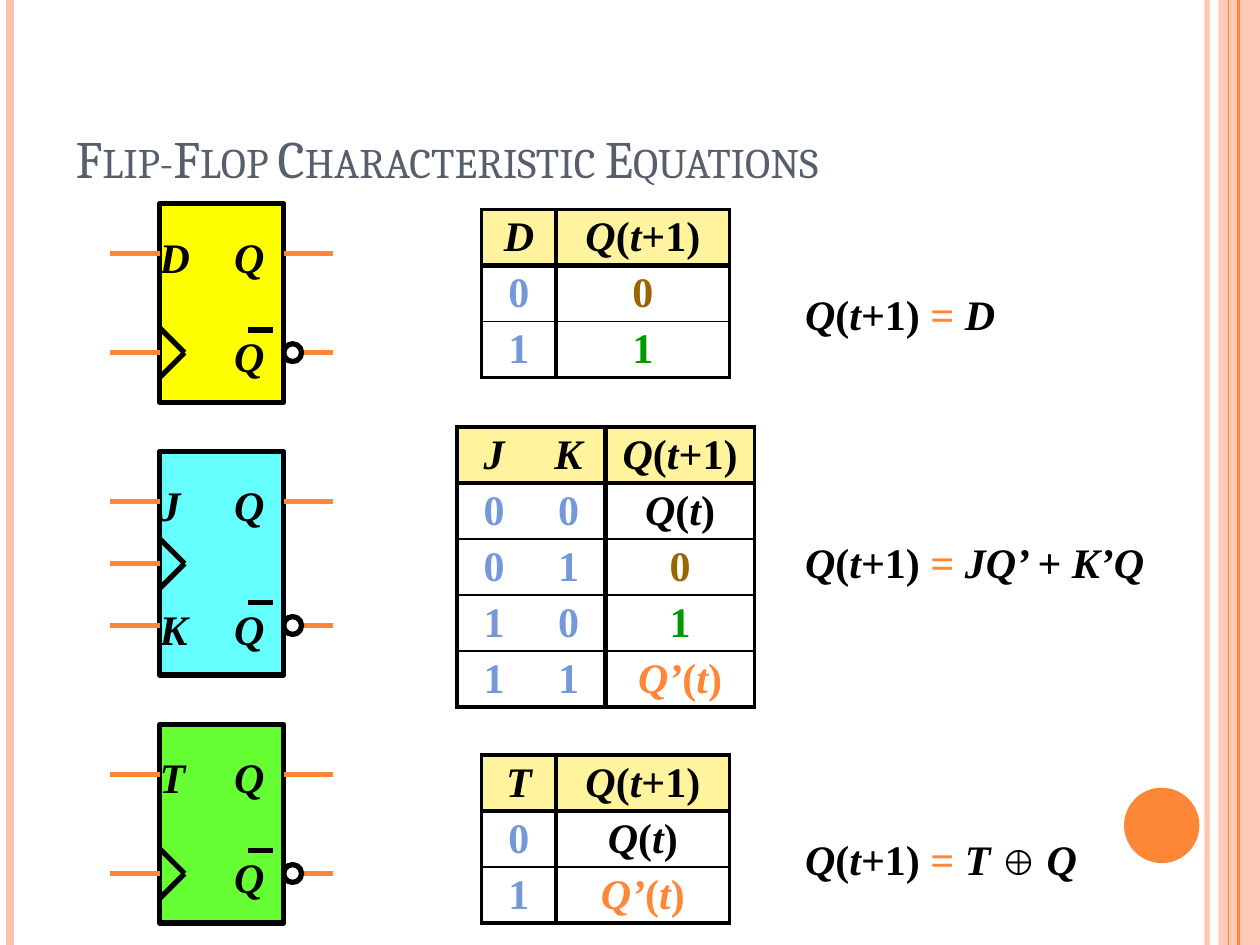
import dataclasses
import typing

import lxml.etree
import pptx
import pptx.dml.color
import pptx.enum.shapes
import pptx.enum.text
import pptx.oxml.ns
import pptx.util

Cm = pptx.util.Cm
Pt = pptx.util.Pt
qn = pptx.oxml.ns.qn


@dataclasses.dataclass(frozen=True)
class Theme:
    black: str = "000000"
    white: str = "FFFFFF"
    orange: str = "FE8637"
    peach: str = "FEC3AE"
    slate: str = "575F6D"
    header: str = "FFF39D"
    blue: str = "7598D9"
    brown: str = "996600"
    green: str = "009900"
    title_font: str = "Cambria"
    body_font: str = "Times New Roman"
    title_size: float = 30
    body_size: float = 24
    symbol_size: float = 20
    thick: float = 3
    frame: float = 2.25
    thin: float = 1


THEME = Theme()


class Run(typing.NamedTuple):
    text: str
    italic: bool = True
    color: str = THEME.black
    size: float = THEME.body_size


class Pin(typing.NamedTuple):
    label: str
    y: float


class FlipFlop(typing.NamedTuple):
    top: float
    height: float
    fill: str
    inputs: list[Pin]
    clock: float
    inverted: float


class TruthTable(typing.NamedTuple):
    left: float
    top: float
    widths: list[float]
    rows: list[list[list[Run]]]


class Equation(typing.NamedTuple):
    top: float
    width: float
    result: list[Run]


class Rule(typing.NamedTuple):
    x: float
    color: str
    width: float
    opacity: int = 100


def rgb(color: str) -> pptx.dml.color.RGBColor:
    return pptx.dml.color.RGBColor.from_string(color)


def set_opacity(element, percent: int) -> None:
    color = element.find(".//" + qn("a:srgbClr"))
    lxml.etree.SubElement(color, qn("a:alpha"), val=str(percent * 1000))


def draw_line(shapes, x1: float, y1: float, x2: float, y2: float, color: str, width: float = THEME.thick):
    line = shapes.add_connector(pptx.enum.shapes.MSO_CONNECTOR.STRAIGHT, Cm(x1), Cm(y1), Cm(x2), Cm(y2))
    line.line.color.rgb = rgb(color)
    line.line.width = Pt(width)
    lxml.etree.SubElement(line._element.spPr, qn("a:effectLst"))
    return line


def draw_shape(shapes, kind, left: float, top: float, width: float, height: float, fill: str, outlined: bool = False):
    shape = shapes.add_shape(kind, Cm(left), Cm(top), Cm(width), Cm(height))
    shape.shadow.inherit = False
    shape.fill.solid()
    shape.fill.fore_color.rgb = rgb(fill)
    if outlined:
        shape.line.color.rgb = rgb(THEME.black)
        shape.line.width = Pt(THEME.thick)
    else:
        shape.line.fill.background()
    return shape


def add_runs(paragraph, runs: list[Run]) -> None:
    for item in runs:
        run = paragraph.add_run()
        run.text = item.text
        run.font.name = THEME.body_font
        run.font.size = Pt(item.size)
        run.font.bold = True
        run.font.italic = item.italic
        run.font.color.rgb = rgb(item.color)


def draw_text(shapes, left: float, top: float, width: float, height: float, runs: list[Run], spacing: float = 1.0) -> None:
    frame = shapes.add_textbox(Cm(left), Cm(top), Cm(width), Cm(height)).text_frame
    frame.word_wrap = True
    frame.margin_left = frame.margin_right = frame.margin_top = frame.margin_bottom = 0
    frame.paragraphs[0].line_spacing = spacing
    add_runs(frame.paragraphs[0], runs)


def draw_flip_flop(slide, item: FlipFlop) -> None:
    shapes = slide.shapes.add_group_shape().shapes
    kinds = pptx.enum.shapes.MSO_SHAPE
    left, width, lead = 3.22, 2.5, 1.0
    right = left + width
    output, clock, inverted = (item.top + y for y in (1, item.clock, item.inverted))
    draw_shape(shapes, kinds.RECTANGLE, left, item.top, width, item.height, item.fill, True)
    for pin in item.inputs:
        y = item.top + pin.y
        draw_line(shapes, left, y, left - lead, y, THEME.orange)
        draw_text(shapes, left, y - 0.45, 1, 1, [Run(pin.label)])
    draw_line(shapes, left, clock, left - lead, clock, THEME.orange)
    for offset in (-0.5, 0.5):
        draw_line(shapes, left, clock + offset, left + 0.5, clock, THEME.black)
    for y in (output, inverted):
        draw_line(shapes, right, y, right + lead, y, THEME.orange)
        draw_text(shapes, left + 1.5, y - 0.45, 1, 1, [Run("Q")])
    draw_shape(shapes, kinds.OVAL, right, inverted - 0.18, 0.36, 0.36, THEME.white, True)
    draw_line(shapes, left + 1.78, inverted - 0.46, left + 2.28, inverted - 0.46, THEME.black)


def set_border(cell, side: str, width: float) -> None:
    properties = cell._tc.get_or_add_tcPr()
    line = lxml.etree.SubElement(properties, qn("a:ln" + side), w=str(int(Pt(width))))
    if width:
        fill = lxml.etree.SubElement(line, qn("a:solidFill"))
        lxml.etree.SubElement(fill, qn("a:srgbClr"), val=THEME.black)
    else:
        lxml.etree.SubElement(line, qn("a:noFill"))


def edge_width(index: int, count: int, divider: int, inner: float) -> float:
    if index in (0, count):
        return THEME.frame
    return THEME.thick if index == divider else inner


def draw_truth_table(slide, item: TruthTable) -> None:
    row_height = 1.13
    rows, columns = len(item.rows), len(item.widths)
    table = slide.shapes.add_table(rows, columns, Cm(item.left), Cm(item.top),
                                   Cm(sum(item.widths)), Cm(rows * row_height)).table
    table.first_row = table.horz_banding = False
    for column, width in zip(table.columns, item.widths):
        column.width = Cm(width)
    for r, values in enumerate(item.rows):
        table.rows[r].height = Cm(row_height)
        for c, runs in enumerate(values):
            cell = table.cell(r, c)
            cell.margin_left = cell.margin_right = cell.margin_top = cell.margin_bottom = 0
            cell.vertical_anchor = pptx.enum.text.MSO_ANCHOR.MIDDLE
            for side, edge in (("L", c), ("R", c + 1)):
                set_border(cell, side, edge_width(edge, columns, columns - 1, 0))
            for side, edge in (("T", r), ("B", r + 1)):
                set_border(cell, side, edge_width(edge, rows, 1, THEME.thin))
            if r == 0:
                cell.fill.solid()
                cell.fill.fore_color.rgb = rgb(THEME.header)
            else:
                cell.fill.background()
            paragraph = cell.text_frame.paragraphs[0]
            paragraph.alignment = pptx.enum.text.PP_ALIGN.CENTER
            add_runs(paragraph, runs)


def state(name: str, time: str, color: str = THEME.black) -> list[Run]:
    return [Run(name, True, color), Run("(", False, color), Run("t", True, color), Run(time, False, color)]


def bits(digits: str) -> list[list[Run]]:
    return [[Run(digit, False, THEME.blue)] for digit in digits]


NEXT, HOLD, TOGGLE = state("Q", "+1)"), state("Q", ")"), state("Q’", ")", THEME.orange)
RESET, SET = [Run("0", False, THEME.brown)], [Run("1", False, THEME.green)]

RULES = [Rule(24.33, THEME.peach, 3, 93), Rule(0.2, THEME.peach, 4.5),
         Rule(24.97, THEME.orange, 1.5), Rule(24.77, THEME.orange, 0.75)]
FLIP_FLOPS = [
    FlipFlop(4.11, 4, "FFFF00", [Pin("D", 1)], 3, 3),
    FlipFlop(9.11, 4.5, "66FFFF", [Pin("J", 1), Pin("K", 3.5)], 2.25, 3.5),
    FlipFlop(14.61, 4, "66FF33", [Pin("T", 1)], 3, 3),
]
TABLES = [
    TruthTable(9.71, 4.22, [1.5, 3.5], [[[Run("D")], NEXT], bits("0") + [RESET], bits("1") + [SET]]),
    TruthTable(9.21, 8.61, [1.5, 1.5, 3], [[[Run("J")], [Run("K")], NEXT], bits("00") + [HOLD],
                                           bits("01") + [RESET], bits("10") + [SET], bits("11") + [TOGGLE]]),
    TruthTable(9.71, 15.22, [1.5, 3.5], [[[Run("T")], NEXT], bits("0") + [HOLD], bits("1") + [TOGGLE]]),
]
EQUATIONS = [
    Equation(5.61, 4.5, [Run("D")]),
    Equation(10.61, 7, [Run("JQ’ "), Run("+", False), Run(" K’Q")]),
    Equation(16.61, 6.5, [Run("T "), Run("⊕", False, size=THEME.symbol_size), Run(" ", False), Run("Q")]),
]


def draw_title(slide, text: str) -> None:
    title = slide.shapes.title
    title.left, title.top, title.width, title.height = Cm(1.27), Cm(0.76), Cm(21.39), Cm(3.18)
    title.text_frame.vertical_anchor = pptx.enum.text.MSO_ANCHOR.BOTTOM
    paragraph = title.text_frame.paragraphs[0]
    paragraph.alignment = pptx.enum.text.PP_ALIGN.LEFT
    run = paragraph.add_run()
    run.text = text
    run.font.name = THEME.title_font
    run.font.size = Pt(THEME.title_size)
    run.font.color.rgb = rgb(THEME.slate)
    run.font._element.set("cap", "small")


def draw_decoration(slide) -> None:
    kinds = pptx.enum.shapes.MSO_SHAPE
    band = draw_shape(slide.shapes, kinds.RECTANGLE, 24.56, 0, 0.84, 19.05, THEME.peach)
    set_opacity(band._element.spPr, 87)
    for rule in RULES:
        line = draw_line(slide.shapes, rule.x, 0, rule.x, 19.05, rule.color, rule.width)
        if rule.opacity < 100:
            set_opacity(line._element.spPr, rule.opacity)
    draw_shape(slide.shapes, kinds.OVAL, 22.66, 15.88, 1.52, 1.52, THEME.orange)


def main() -> None:
    presentation = pptx.Presentation()
    presentation.slide_width, presentation.slide_height = Cm(25.4), Cm(19.05)
    slide = presentation.slides.add_slide(presentation.slide_layouts[5])
    draw_decoration(slide)
    draw_title(slide, "Flip-Flop Characteristic Equations")
    for flip_flop in FLIP_FLOPS:
        draw_flip_flop(slide, flip_flop)
    for table in TABLES:
        draw_truth_table(slide, table)
    for equation in EQUATIONS:
        runs = NEXT + [Run(" ", False), Run("= ", False, THEME.orange)] + equation.result
        draw_text(slide.shapes, 16.23, equation.top, equation.width, 1.22, runs, 1.2)
    presentation.save("out.pptx")


if __name__ == "__main__":
    main()
